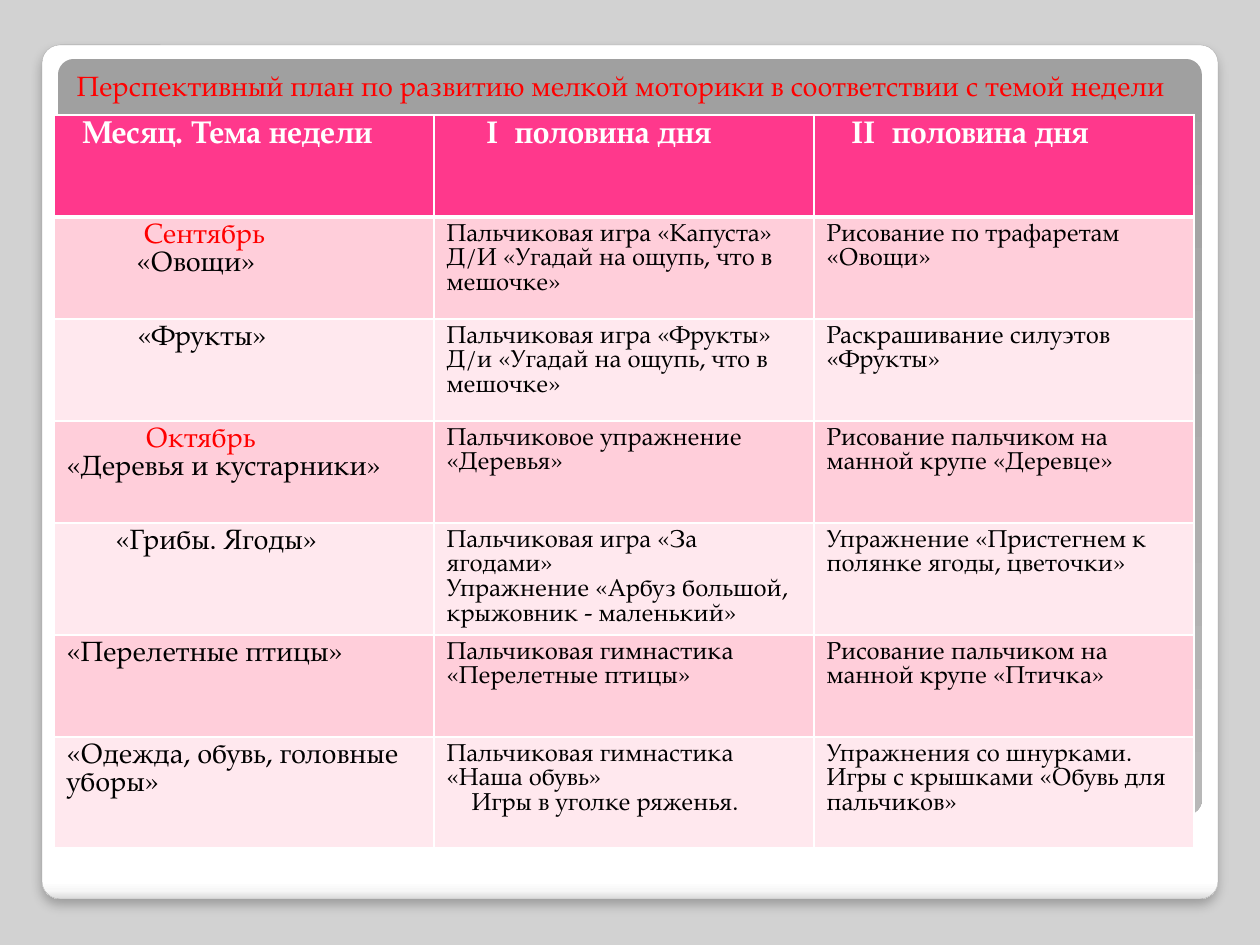
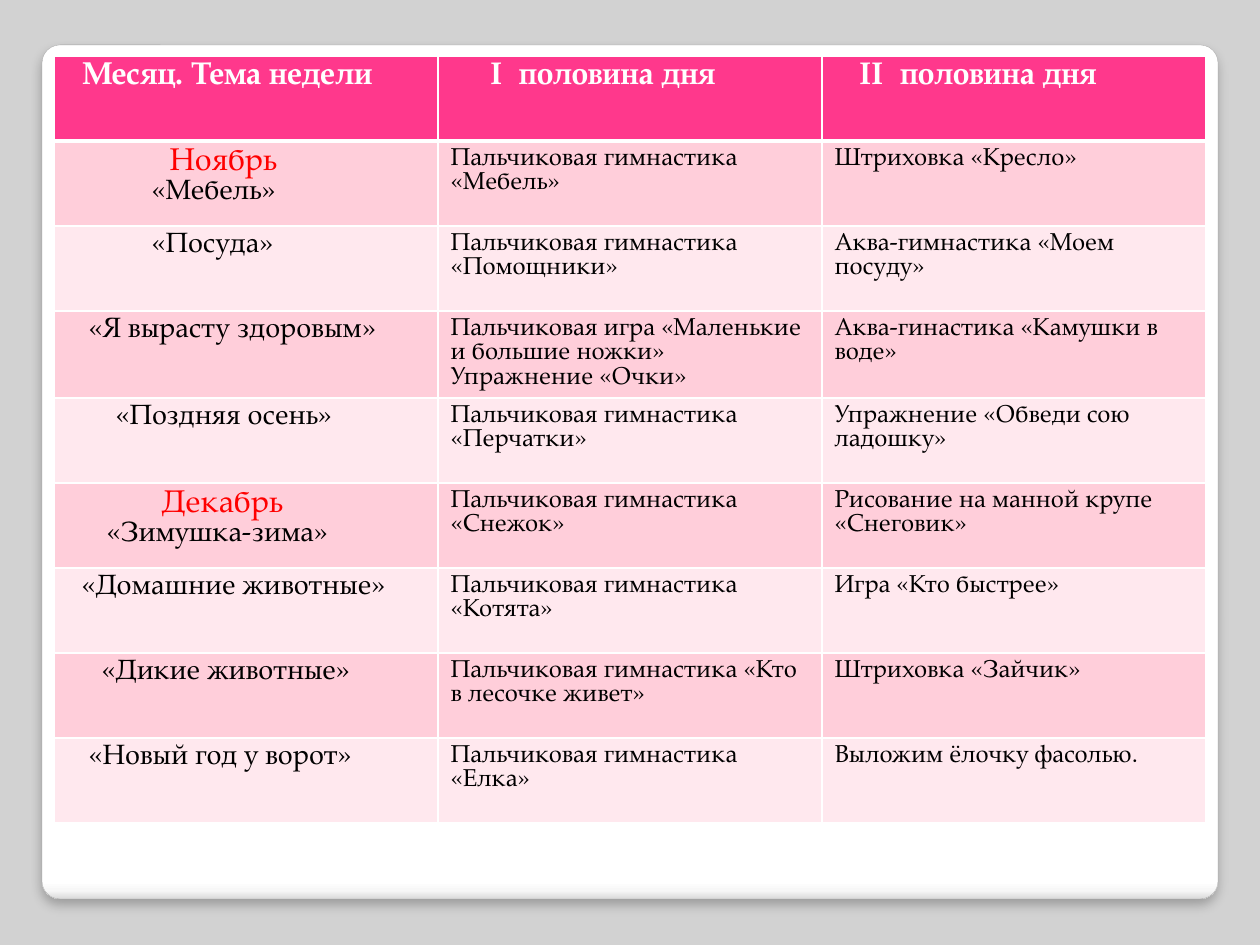
from pptx import Presentation
from pptx.dml.color import RGBColor
from pptx.enum.shapes import MSO_SHAPE
from pptx.enum.text import MSO_ANCHOR, MSO_AUTO_SIZE, PP_ALIGN
from pptx.oxml import parse_xml
from pptx.oxml.ns import nsdecls, qn
from pptx.util import Pt

ROUNDED = MSO_SHAPE.ROUNDED_RECTANGLE
TOP = MSO_ANCHOR.TOP
LEFT = PP_ALIGN.LEFT
NO_AUTOFIT = MSO_AUTO_SIZE.NONE

EMU_PER_PX = 914400 / 126
FONT = "TeX Gyre Pagella"
TITLE_ONLY, BLANK = 5, 6

WHITE = RGBColor(0xFF, 0xFF, 0xFF)
BLACK = RGBColor(0x00, 0x00, 0x00)
RED = RGBColor(0xFF, 0x00, 0x00)
PINK = RGBColor(0xFF, 0x38, 0x8C)
ROSE = RGBColor(0xFF, 0xCE, 0xDA)
BLUSH = RGBColor(0xFF, 0xE8, 0xEE)
BACKDROP = RGBColor(0xD2, 0xD2, 0xD2)
CARD_EDGE = RGBColor(0xA4, 0xA4, 0xA4)
CARD_FADE = RGBColor(0xF7, 0xF7, 0xF7)
CARD_FOOT = RGBColor(0xDA, 0xDA, 0xDA)
PANEL_TOP = RGBColor(0xA0, 0xA0, 0xA0)
PANEL_FOOT = RGBColor(0xB8, 0xB8, 0xB8)

TITLE = "Перспективный план по развитию мелкой моторики в соответствии с темой недели"

# Header cells: text and indent in px
HEADER = [("Месяц. Тема недели", 16), ("I  половина дня", 40), ("II  половина дня", 25)]

# Plan rows: month (or None), theme, first half of the day, second half.
# Months, themes and lines may carry an indent in px.
AUTUMN = [
    (("Сентябрь", 77), ("«Овощи»", 70),
     [("Пальчиковая игра «Капуста» Д/И «Угадай на ощупь, что в мешочке»", 0)],
     [("Рисование по трафаретам «Овощи»", 0)]),
    (None, ("«Фрукты»", 71),
     [("Пальчиковая игра «Фрукты» Д/и «Угадай на ощупь, что в мешочке»", 0)],
     [("Раскрашивание силуэтов «Фрукты»", 0)]),
    (("Октябрь", 79), ("«Деревья и кустарники»", 0),
     [("Пальчиковое упражнение «Деревья»", 0)],
     [("Рисование пальчиком на манной крупе «Деревце»", 0)]),
    (None, ("«Грибы. Ягоды»", 49),
     [("Пальчиковая игра «За ягодами»", 0),
      ("Упражнение «Арбуз большой, крыжовник - маленький»", 0)],
     [("Упражнение «Пристегнем к полянке ягоды, цветочки»", 0)]),
    (None, ("«Перелетные птицы»", 0),
     [("Пальчиковая гимнастика «Перелетные птицы»", 0)],
     [("Рисование пальчиком на манной крупе «Птичка»", 0)]),
    (None, ("«Одежда, обувь, головные уборы»", 0),
     [("Пальчиковая гимнастика «Наша обувь»", 0), ("Игры в уголке ряженья.", 25)],
     [("Упражнения со шнурками.", 0), ("Игры с крышками «Обувь для пальчиков»", 0)]),
]
WINTER = [
    (("Ноябрь", 103), ("«Мебель»", 85),
     [("Пальчиковая гимнастика «Мебель»", 0)], [("Штриховка «Кресло»", 0)]),
    (None, ("«Посуда»", 85),
     [("Пальчиковая гимнастика «Помощники»", 0)], [("Аква-гимнастика «Моем посуду»", 0)]),
    (None, ("«Я вырасту здоровым»", 22),
     [("Пальчиковая игра «Маленькие и большие ножки»", 0), ("Упражнение «Очки»", 0)],
     [("Аква-гинастика «Камушки в воде»", 0)]),
    (None, ("«Поздняя осень»", 49),
     [("Пальчиковая гимнастика «Перчатки»", 0)], [("Упражнение «Обведи сою ладошку»", 0)]),
    (("Декабрь", 95), ("«Зимушка-зима»", 40),
     [("Пальчиковая гимнастика «Снежок»", 0)],
     [("Рисование на манной крупе «Снеговик»", 0)]),
    (None, ("«Домашние животные»", 15),
     [("Пальчиковая гимнастика «Котята»", 0)], [("Игра «Кто быстрее»", 0)]),
    (None, ("«Дикие животные»", 35),
     [("Пальчиковая гимнастика «Кто в лесочке живет»", 0)], [("Штриховка «Зайчик»", 0)]),
    (None, ("«Новый год у ворот»", 22),
     [("Пальчиковая гимнастика «Елка»", 0)], [("Выложим ёлочку фасолью.", 0)]),
]


def px(length):
    return round(length * EMU_PER_PX)


class PlanDeck:
    def __init__(self):
        self.deck = Presentation()
        self.deck.slide_width, self.deck.slide_height = px(1260), px(945)
        self.page = None

    def add_page(self, layout):
        """Start a slide with the grey backdrop and the white card."""
        self.page = self.deck.slides.add_slide(self.deck.slide_layouts[layout])
        background = self.page.background.fill
        background.solid()
        background.fore_color.rgb = BACKDROP
        card = self.add_rounded(42, 45, 1176, 854, [
            (0, WHITE), (98, WHITE), (99, CARD_FADE), (100, CARD_FOOT)])
        card.line.color.rgb = CARD_EDGE
        card.line.width = Pt(0.16)
        effects = card._element.spPr.find(qn("a:effectLst"))
        effects.append(parse_xml(
            f'<a:outerShdw {nsdecls("a")} blurRad="{Pt(6)}" dist="{Pt(4)}" dir="5400000" '
            'algn="t" rotWithShape="0"><a:srgbClr val="000000"><a:alpha val="25000"/>'
            '</a:srgbClr></a:outerShdw>'))

    def add_rounded(self, left, top, width, height, stops):
        """Rounded rectangle with a top-to-bottom gradient and no line."""
        box = self.page.shapes.add_shape(ROUNDED, px(left), px(top), px(width), px(height))
        box.adjustments[0] = 0.021
        box.shadow.inherit = False
        box.line.fill.background()
        marks = "".join(f'<a:gs pos="{position * 1000}"><a:srgbClr val="{color}"/></a:gs>'
                        for position, color in stops)
        box._element.spPr.find(qn("a:prstGeom")).addnext(parse_xml(
            f'<a:gradFill {nsdecls("a")} rotWithShape="1"><a:gsLst>{marks}</a:gsLst>'
            '<a:lin ang="5400000" scaled="0"/></a:gradFill>'))
        return box

    def add_span(self, para, text, size, color, bold=False, indent=0):
        para.alignment = LEFT
        if indent:
            para._p.get_or_add_pPr().set("marL", str(px(indent)))
        span = para.add_run()
        span.text = text
        span.font.name = FONT
        span.font.size = Pt(size)
        span.font.bold = bold
        span.font.color.rgb = color

    def add_title(self, text):
        title = self.page.shapes.title
        title.left, title.top, title.width, title.height = px(64), px(55), px(1171), px(84)
        frame = title.text_frame
        frame.auto_size = NO_AUTOFIT
        frame.vertical_anchor = TOP
        frame.margin_top = px(14)
        self.add_span(frame.paragraphs[0], text, 16, RED)
        # Bring the title in front of the panel and the table
        self.page.shapes._spTree.append(title._element)

    def format_cell(self, cell, fill, lines, top_line=1, bottom_line=1):
        """Fill and border a cell; lines are (text, indent, size, color, bold)."""
        cell.fill.solid()
        cell.fill.fore_color.rgb = fill
        properties = cell._tc.get_or_add_tcPr()
        edges = [("lnL", 1), ("lnR", 1), ("lnT", top_line), ("lnB", bottom_line)]
        for place, (edge, width) in enumerate(edges):
            properties.insert(place, parse_xml(
                f'<a:{edge} {nsdecls("a")} w="{Pt(width)}"><a:solidFill>'
                f'<a:srgbClr val="{WHITE}"/></a:solidFill></a:{edge}>'))
        frame = cell.text_frame
        for number, (text, indent, size, color, bold) in enumerate(lines):
            para = frame.add_paragraph() if number else frame.paragraphs[0]
            self.add_span(para, text, size, color, bold, indent)

    def add_plan(self, top, column_width, row_heights, plan, month_size):
        frame = self.page.shapes.add_table(
            len(plan) + 1, len(HEADER), px(54), px(top),
            px(column_width * len(HEADER)), px(sum(row_heights)))
        table = frame.table
        for column in table.columns:
            column.width = px(column_width)
        for row, height in zip(table.rows, row_heights):
            row.height = px(height)
        for column, (text, indent) in enumerate(HEADER):
            self.format_cell(table.cell(0, column), PINK,
                             [(text, indent, 18, WHITE, True)], bottom_line=3)
        for number, (month, theme, *halves) in enumerate(plan, start=1):
            subject = [(*month, month_size, RED, False)] if month else []
            subject.append((*theme, 16, BLACK, False))
            activities = [[(*line, 14, BLACK, False) for line in half] for half in halves]
            for column, lines in enumerate([subject, *activities]):
                self.format_cell(table.cell(number, column), ROSE if number % 2 else BLUSH,
                                 lines, top_line=3 if number == 1 else 1)


def main():
    plan = PlanDeck()

    # September and October, under the title panel
    plan.add_page(TITLE_ONLY)
    plan.add_rounded(58, 59, 1144, 756, [(0, PANEL_TOP), (100, PANEL_FOOT)])
    plan.add_plan(115, 380, [102] * 4 + [112, 102, 111], AUTUMN, month_size=16)
    plan.add_title(TITLE)

    # November and December
    plan.add_page(BLANK)
    plan.add_plan(56, 384, [85] * 3 + [87] + [85] * 5, WINTER, month_size=18)

    plan.deck.save("out.pptx")


if __name__ == "__main__":
    main()
